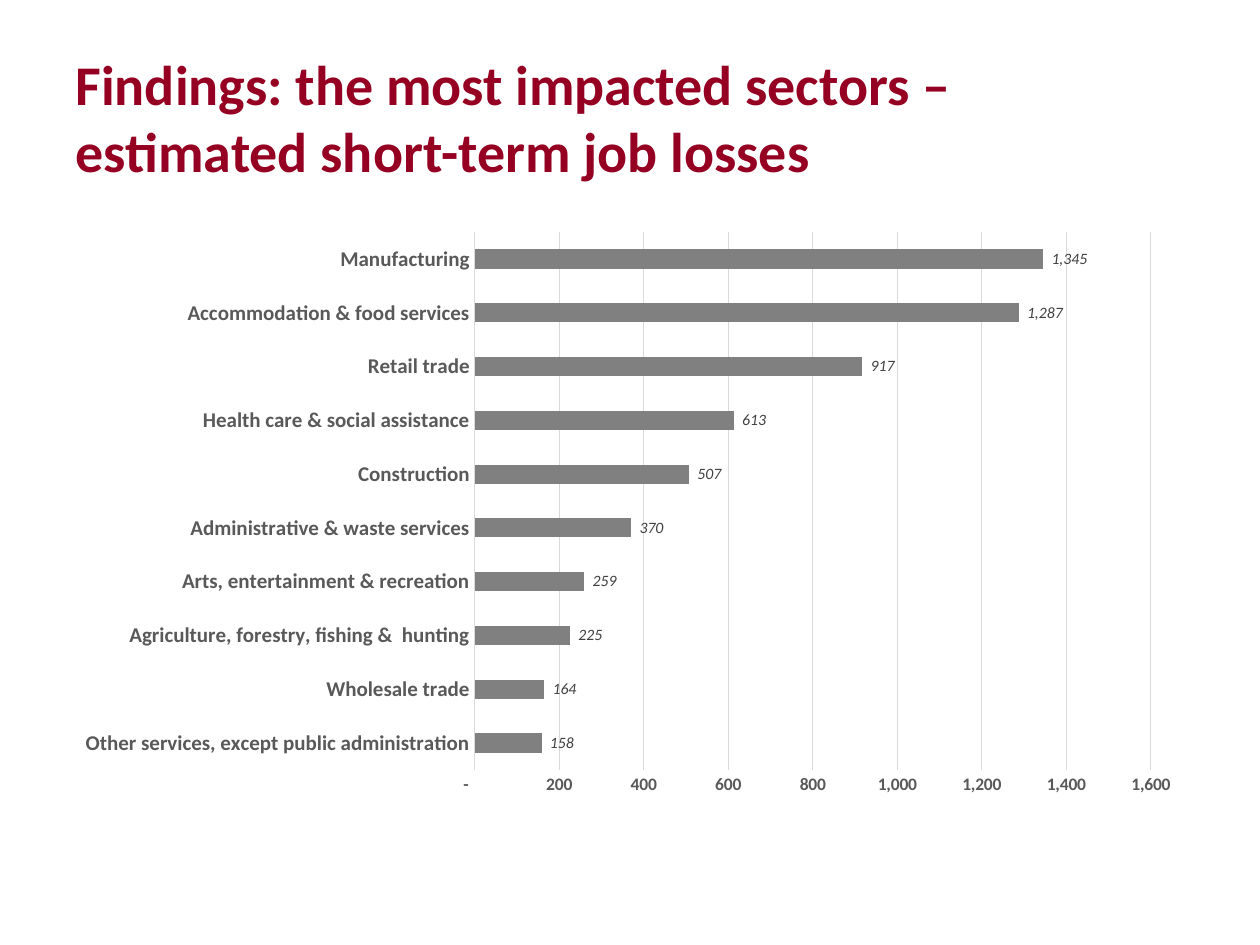
from pptx import Presentation
from pptx.chart.data import CategoryChartData
from pptx.dml.color import RGBColor
from pptx.enum.chart import XL_CHART_TYPE, XL_LABEL_POSITION, XL_TICK_MARK
from pptx.enum.text import MSO_ANCHOR, PP_ALIGN
from pptx.util import Inches, Pt

COLORS = {
    "title": "950022",
    "bar": "808080",
    "axis_text": "595959",
    "value_text": "404040",
    "grid": "D9D9D9",
    "text": "000000",
}
FONT = "Calibri"
COUNT_FORMAT = '_(* #,##0_);_(* \\(#,##0\\);_(* "-"??_);_(@_)'
JOB_LOSSES = {
    "Other services, except public administration": 158,
    "Wholesale trade": 164,
    "Agriculture, forestry, fishing &  hunting": 225,
    "Arts, entertainment & recreation": 259,
    "Administrative & waste services": 370,
    "Construction": 507,
    "Health care & social assistance": 613,
    "Retail trade": 917,
    "Accommodation & food services": 1287,
    "Manufacturing": 1345,
}


def color(name):
    return RGBColor.from_string(COLORS[name])


def format_font(font, size, tint, bold=False, italic=False):
    font.name = FONT
    font.size = Pt(size)
    font.bold = bold
    font.italic = italic
    font.color.rgb = color(tint)


def write(frame, text, align=PP_ALIGN.LEFT, **font_format):
    frame.text = text
    paragraph = frame.paragraphs[0]
    paragraph.alignment = align
    format_font(paragraph.runs[0].font, **font_format)


class SlideBuilder:
    def __init__(self, presentation):
        self.width = presentation.slide_width
        self.height = presentation.slide_height
        self.slide = presentation.slides.add_slide(presentation.slide_layouts[5])

    def area(self, left, top, width, height):
        return (
            round(left * self.width),
            round(top * self.height),
            round(width * self.width),
            round(height * self.height),
        )

    def title(self, text, *shares):
        heading = self.slide.shapes.title
        heading.left, heading.top, heading.width, heading.height = self.area(*shares)
        heading.text_frame.word_wrap = True
        heading.text_frame.vertical_anchor = MSO_ANCHOR.MIDDLE
        write(heading.text_frame, text, size=32, tint="title", bold=True)

    def bar_chart(self, values, *shares):
        data = CategoryChartData(number_format=COUNT_FORMAT)
        data.categories = list(values)
        data.add_series("Series 1", list(values.values()))
        chart = self.slide.shapes.add_chart(
            XL_CHART_TYPE.BAR_CLUSTERED, *self.area(*shares), data
        ).chart
        format_font(chart.font, 10, "text")
        chart.has_legend = False
        chart.has_title = False
        self.style_bars(chart.plots[0])
        self.style_axes(chart.category_axis, chart.value_axis)

    def style_bars(self, plot):
        plot.gap_width = 182
        plot.vary_by_categories = False
        fill = plot.series[0].format.fill
        fill.solid()
        fill.fore_color.rgb = color("bar")
        plot.has_data_labels = True
        labels = plot.data_labels
        labels.show_value = True
        labels.position = XL_LABEL_POSITION.OUTSIDE_END
        labels.number_format = COUNT_FORMAT
        labels.number_format_is_linked = False
        format_font(labels.font, 9, "value_text", italic=True)

    def style_axes(self, sectors, losses):
        for axis, size in ((sectors, 12), (losses, 10)):
            axis.major_tick_mark = axis.minor_tick_mark = XL_TICK_MARK.NONE
            format_font(axis.tick_labels.font, size, "axis_text", bold=True)
        losses.minimum_scale = 0
        losses.maximum_scale = 1600
        losses.major_unit = 200
        losses.tick_labels.number_format = COUNT_FORMAT
        losses.tick_labels.number_format_is_linked = False
        losses.format.line.fill.background()
        sectors.has_major_gridlines = False
        losses.has_major_gridlines = True
        for line in (sectors.format.line, losses.major_gridlines.format.line):
            line.width = Pt(0.75)
            line.color.rgb = color("grid")


def main():
    presentation = Presentation()
    presentation.slide_width = Inches(10)
    presentation.slide_height = Inches(7.5)
    builder = SlideBuilder(presentation)
    builder.title(
        "Findings: the most impacted sectors – estimated short-term job losses",
        0.05, 0.04, 0.9, 1 / 6,
    )
    builder.bar_chart(JOB_LOSSES, 0.05, 7 / 30, 0.9, 0.62)
    presentation.save("out.pptx")


if __name__ == "__main__":
    main()
